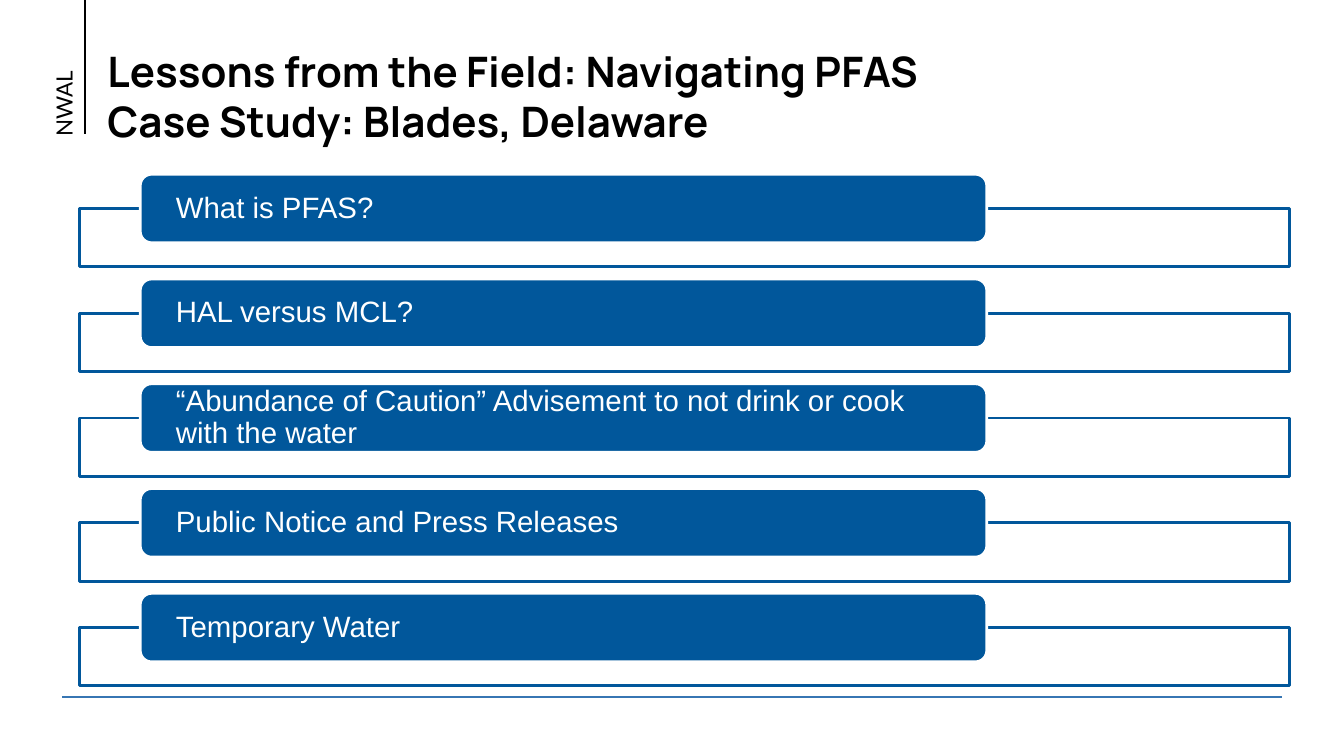
from lxml import etree
from pptx import Presentation
from pptx.dml.color import RGBColor
from pptx.enum.shapes import MSO_CONNECTOR, MSO_SHAPE
from pptx.enum.text import MSO_ANCHOR
from pptx.oxml.ns import qn
from pptx.util import Cm, Pt

STRAIGHT = MSO_CONNECTOR.STRAIGHT
RECT, ROUNDED = MSO_SHAPE.RECTANGLE, MSO_SHAPE.ROUNDED_RECTANGLE
TOP, MIDDLE = MSO_ANCHOR.TOP, MSO_ANCHOR.MIDDLE

BLACK = RGBColor(0x00, 0x00, 0x00)
WHITE = RGBColor(0xFF, 0xFF, 0xFF)
BLUE = RGBColor(0x01, 0x57, 0x9B)
RULE_BLUE = RGBColor(0x37, 0x76, 0xB3)

TITLE = ["Lessons from the Field: Navigating PFAS",
         "Case Study: Blades, Delaware"]
LESSONS = [
    "What is PFAS?",
    "HAL versus MCL?",
    "“Abundance of Caution” Advisement to not drink or cook with the water",
    "Public Notice and Press Releases",
    "Temporary Water",
]


def add_rule(slide, x1, y1, x2, y2, color):
    line = slide.shapes.add_connector(STRAIGHT, x1, y1, x2, y2)
    line.line.color.rgb = color
    line.line.width = Pt(1.5)
    etree.SubElement(line._element.spPr, qn("a:effectLst"))


def add_panel(slide, kind, box, fill, line):
    sp = slide.shapes.add_shape(kind, *box)
    sp.shadow.inherit = False
    sp.fill.solid()
    sp.fill.fore_color.rgb = fill
    sp.line.color.rgb = line
    sp.line.width = Pt(2)
    return sp


def set_text(sp, lines, font, size, color, inset_x, inset_y,
             anchor=TOP, spacing=1.0, bold=False):
    tf = sp.text_frame
    tf.word_wrap = True
    tf.vertical_anchor = anchor
    tf.margin_left = tf.margin_right = inset_x
    tf.margin_top = tf.margin_bottom = inset_y
    tf.text = "\v".join(lines)
    p = tf.paragraphs[0]
    p.line_spacing = spacing
    for r in p.runs:
        r.font.name = font
        r.font.size = Pt(size)
        r.font.bold = bold
        r.font.color.rgb = color


def add_side_label(slide, left, top, width, height):
    sp = slide.shapes.add_textbox(left, top, width, height)
    sp.rotation = 270
    set_text(sp, ["NWAL"], "Lato", 16, BLACK, Cm(0.33), Cm(0.33))


def add_title(slide, left, top, width, height):
    sp = slide.shapes.add_textbox(left, top, width, height)
    set_text(sp, TITLE, "Manrope", 30, BLACK, Cm(0.25), Cm(0.25), bold=True)


def add_lessons(slide, left, top, width, pitch):
    """Stack one outlined bar with a blue heading tab per lesson."""
    tab_h = Cm(1.73)
    for i, lesson in enumerate(LESSONS):
        y = top + i * pitch
        frame = add_panel(slide, RECT,
                          (left, y + tab_h // 2, width, Cm(1.47)), WHITE, BLUE)
        color = frame.fill._xPr.find(qn("a:solidFill"))[0]
        etree.SubElement(color, qn("a:alpha"), val="90000")
        tab = add_panel(slide, ROUNDED,
                        (left + width // 20, y, int(width * 0.7), tab_h),
                        BLUE, WHITE)
        label = slide.shapes.add_textbox(tab.left + Cm(0.09), y + Cm(0.09),
                                         tab.width - Cm(0.18), tab_h - Cm(0.18))
        set_text(label, [lesson], "Arial", 21, WHITE, Cm(0.81), 0,
                 anchor=MIDDLE, spacing=0.9)


def main():
    prs = Presentation()
    prs.slide_width, prs.slide_height = Cm(33.87), Cm(19.05)
    slide = prs.slides.add_slide(prs.slide_layouts[6])
    add_rule(slide, Cm(1.57), Cm(17.56), Cm(32.31), Cm(17.56), RULE_BLUE)
    add_rule(slide, Cm(2.14), 0, Cm(2.14), Cm(3.38), BLACK)
    add_side_label(slide, Cm(-1.93), Cm(-0.46), Cm(7.11), Cm(1.37))
    add_lessons(slide, Cm(2.01), Cm(4.39), Cm(30.48), Cm(2.64))
    add_title(slide, Cm(2.46), Cm(0.89), Cm(23.42), Cm(2.36))
    prs.save("out.pptx")


if __name__ == "__main__":
    main()
